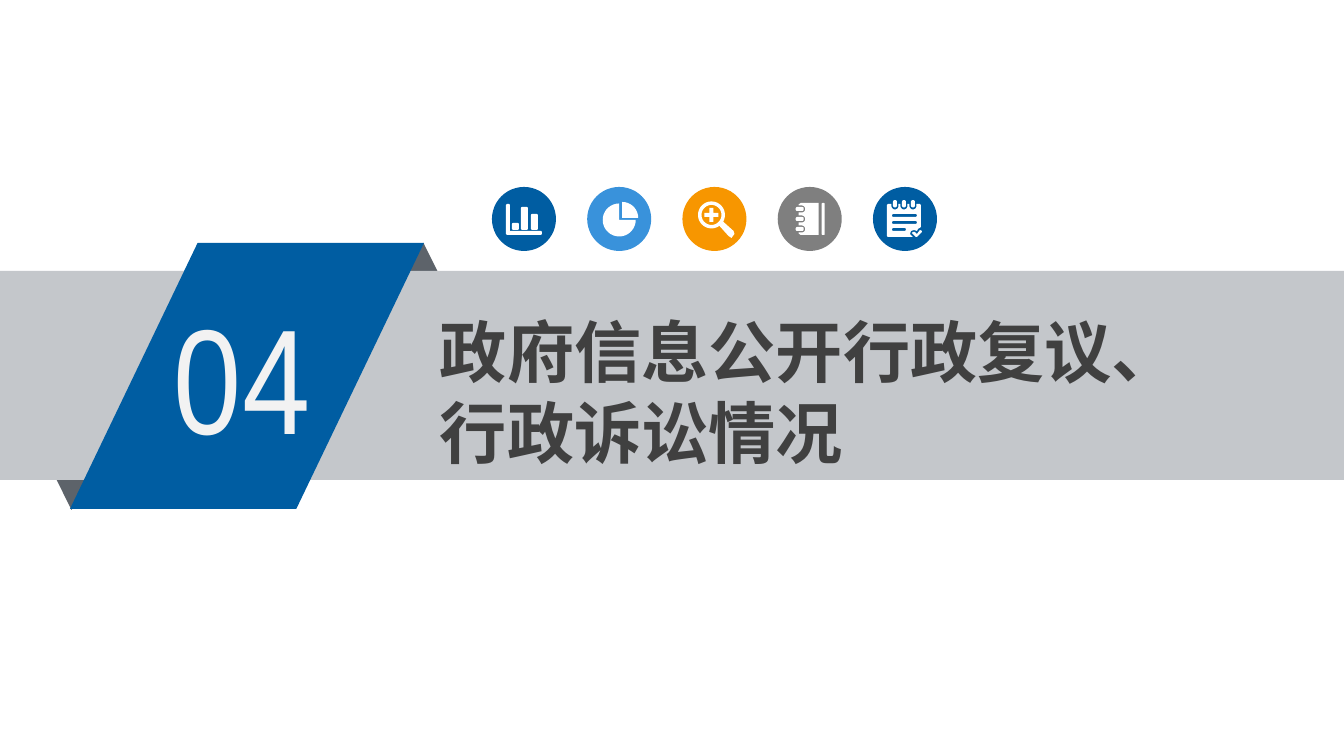
from math import cos, radians, sin

from lxml import etree
from pptx import Presentation
from pptx import util as u
from pptx.dml.color import RGBColor
from pptx.enum import shapes, text
from pptx.oxml.ns import qn

PX = 914400 / 134.4
UNITS = 100

BLUE = RGBColor(0x00, 0x5D, 0xA2)
LIGHT_BLUE = RGBColor(0x39, 0x92, 0xDB)
ORANGE = RGBColor(0xF7, 0x96, 0x00)
GREY = RGBColor(0x7F, 0x7F, 0x7F)
SLATE = RGBColor(0x5D, 0x63, 0x6A)
SILVER = RGBColor(0xC4, 0xC7, 0xCB)
CHARCOAL = RGBColor(0x40, 0x40, 0x40)
OFF_WHITE = RGBColor(0xF2, 0xF2, 0xF2)
WHITE = RGBColor(0xFF, 0xFF, 0xFF)

TITLE = "政府信息公开行政复议、行政诉讼情况"
NUMBER = "04"
TITLE_BOX = (430, 301, 812, 173)
NUMBER_BOX = (164, 280, 195, 191)

KIND = shapes.MSO_SHAPE
BANNER = [
    (KIND.ISOSCELES_TRIANGLE, (363, 243, 121, 122), SLATE, 0),
    (KIND.ISOSCELES_TRIANGLE, (11, 388, 121, 122), SLATE, 180),
    (KIND.RECTANGLE, (0, 271, 1344, 209), SILVER, 0),
    (KIND.PARALLELOGRAM, (70, 243, 354, 266), BLUE, 0),
]
ICON_LEFT, ICON_TOP, ICON_SIZE, ICON_STEP = 492, 187, 64, 95.25


def arc(x, y, radius, start, end):
    steps = max(4, abs(end - start) // 10)
    angles = [radians(start + (end - start) * i / steps) for i in range(steps + 1)]
    return [(x + radius * cos(a), y + radius * sin(a)) for a in angles]


def bar(left, top, right, bottom, radius=1.5):
    corners = [(right - radius, bottom - radius, 0), (left + radius, bottom - radius, 90),
               (left + radius, top + radius, 180), (right - radius, top + radius, 270)]
    return [point for x, y, angle in corners
            for point in arc(x, y, radius, angle, angle + 90)]


def bar_chart():
    axes = [(-18, -14), (-17, -15), (-15, -15), (-14, -14), (-14, 12),
            (17, 12), (18, 13), (18, 15), (17, 16), (-17, 16), (-18, 15)]
    return [axes] + [bar(left, top, left + 7, 11) for left, top in
                     [(-12, 4), (-3, -12), (7, -5)]]


def pie_chart():
    return [[(3, -1)] + arc(3, -1, 16, -90, 0),
            [(0, 1)] + arc(0, 1, 16.5, 0, 270)]


def magnifier():
    x, y = -3, -4
    handle = [(19, 12), (20, 15), (17, 19), (14, 17)]
    plus = [(-2, -7), (2, -7), (2, -2), (7, -2), (7, 2), (2, 2),
            (2, 7), (-2, 7), (-2, 2), (-7, 2), (-7, -2), (-2, -2)]
    return [arc(x, y, 13.5, 54, 390) + handle, arc(x, y, 10, 0, 360),
            [(x + dx, y + dy) for dx, dy in plus]]


def notebook():
    rings = [10, 0, -10]
    page = [(-9, -16), (9, -16), (9, 16), (-9, 16), (-11, 14.5)]
    for y in rings:
        page += [(-11, y + 3.5)] + arc(-8, y, 3.5, 90, -90) + [(-11, y - 3.5)]
    page.append((-11, -14.5))
    return [page, bar(12, -16, 15, 16, 1)] + [bar(-14, y - 2, -6, y + 2) for y in rings]


def checklist():
    clips = [-10, -1, 8]
    page = [(-18, 17), (-18, -14), (-17, -15)]
    for x in clips:
        page += [(x - 3.5, -15)] + arc(x, -13, 3.5, 180, 0) + [(x + 3.5, -15)]
    page += [(15, -15), (16, -14), (16, 8), (13, 10), (12, 12), (9, 11),
             (6, 12), (5, 15), (8, 18), (-17, 18)]
    tick = [(7, 14), (8, 13), (10, 13), (12, 15), (15, 11), (17, 12), (17, 13), (12, 18), (11, 18)]
    lines = [bar(-13, y, right, y + 3) for y, right in [(-5, 12), (2, 12), (9, 1)]]
    return [page, tick] + lines + [bar(x - 2, -19, x + 2, -11.5, 2) for x in clips]


ICONS = [(BLUE, bar_chart), (LIGHT_BLUE, pie_chart), (ORANGE, magnifier),
         (GREY, notebook), (BLUE, checklist)]


def px(*values):
    return [u.Emu(round(value * PX)) for value in values]


def paint(shape, color):
    shape.shadow.inherit = False
    shape.fill.solid()
    shape.fill.fore_color.rgb = color
    shape.line.fill.background()
    return shape


def add_shape(slide, kind, box, color):
    return paint(slide.shapes.add_shape(kind, *px(*box)), color)


def add_outline(slide, x, y, contours):
    scaled = [[(px_x * UNITS, px_y * UNITS) for px_x, px_y in points] for points in contours]
    builder = slide.shapes.build_freeform(*scaled[0][0], scale=PX / UNITS)
    for index, points in enumerate(scaled):
        if index:
            builder.move_to(*points[0])
        builder.add_line_segments(points[1:], close=True)
    paint(builder.convert_to_shape(*px(x, y)), WHITE)


def write(shape, box, words, font_name, size, color, bold, top_margin):
    shape.left, shape.top, shape.width, shape.height = px(*box)
    frame = shape.text_frame
    frame.text = words
    frame.word_wrap = True
    frame.auto_size = text.MSO_AUTO_SIZE.NONE
    frame.vertical_anchor = text.MSO_ANCHOR.TOP
    frame.margin_left, frame.margin_top, frame.margin_right, frame.margin_bottom = px(
        10, top_margin, 10, 5)
    paragraph = frame.paragraphs[0]
    paragraph.alignment = text.PP_ALIGN.LEFT
    font = paragraph.font
    font.name, font.size, font.bold = font_name, u.Pt(size), bold
    font.color.rgb = color
    east_asian = etree.SubElement(paragraph._p.pPr.find(qn("a:defRPr")), qn("a:ea"))
    east_asian.set("typeface", font_name)
    return paragraph


def main():
    presentation = Presentation()
    presentation.slide_width, presentation.slide_height = px(1344, 756)
    slide = presentation.slides.add_slide(presentation.slide_layouts[5])

    for kind, box, color, rotation in BANNER:
        shape = add_shape(slide, kind, box, color)
        shape.rotation = rotation
        if kind == KIND.PARALLELOGRAM:
            shape.adjustments[0] = 0.48

    number = slide.shapes.add_textbox(*px(*NUMBER_BOX))
    write(number, NUMBER_BOX, NUMBER, "Arial Narrow", 80, OFF_WHITE, False, 5)

    title = slide.shapes.title
    slide.shapes._spTree.append(title._element)
    paragraph = write(title, TITLE_BOX, TITLE, "Noto Sans CJK SC", 36, CHARCOAL, True, 9)
    paragraph.line_spacing = u.Pt(43.4)

    for index, (color, contours) in enumerate(ICONS):
        left = ICON_LEFT + index * ICON_STEP
        add_shape(slide, KIND.OVAL, (left, ICON_TOP, ICON_SIZE, ICON_SIZE), color)
        add_outline(slide, left + ICON_SIZE / 2, ICON_TOP + ICON_SIZE / 2, contours())

    presentation.save("out.pptx")


if __name__ == "__main__":
    main()
